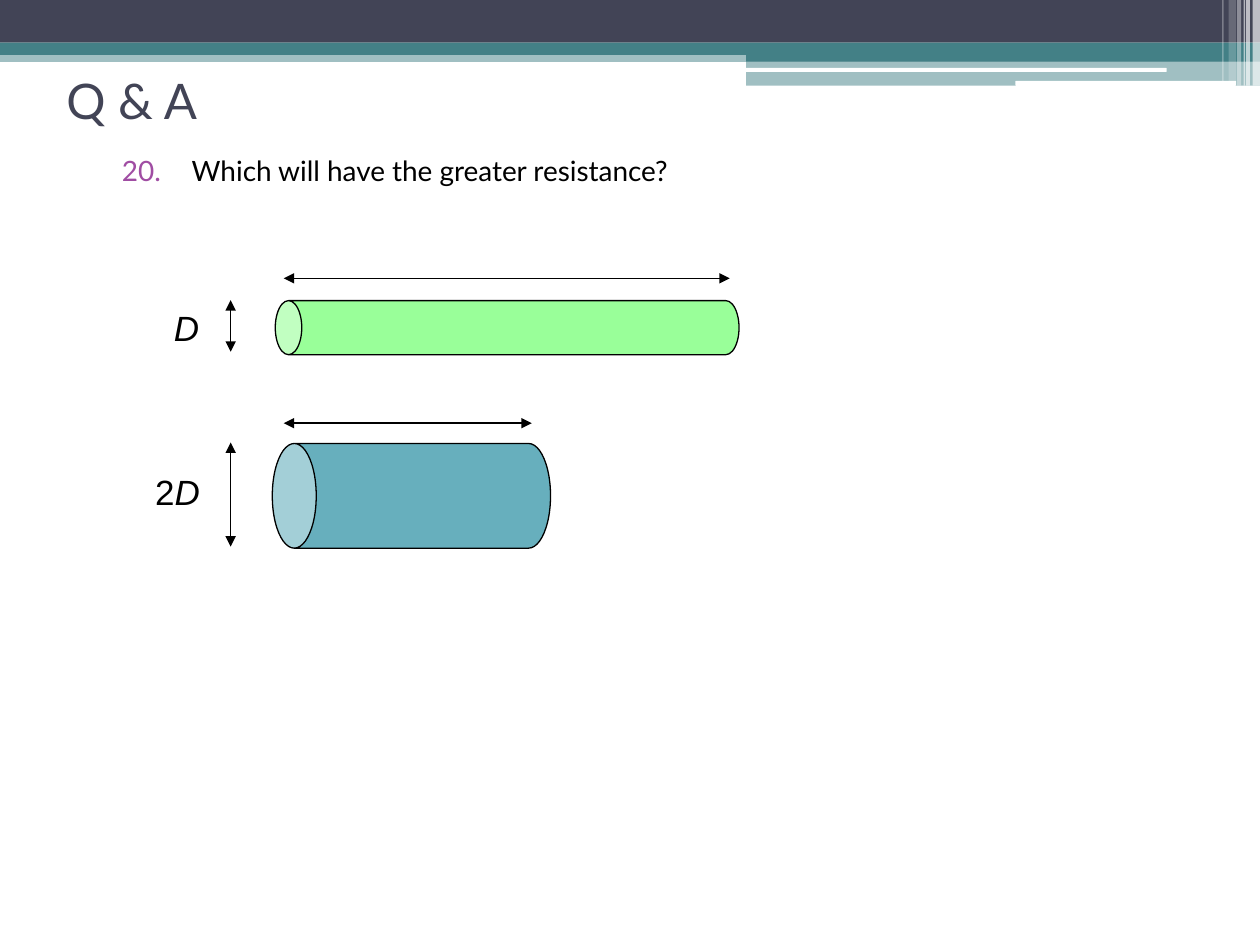
from lxml import etree
from pptx import Presentation
from pptx.dml.color import RGBColor
from pptx.enum.shapes import MSO_CONNECTOR, MSO_SHAPE
from pptx.enum.text import MSO_ANCHOR, MSO_AUTO_SIZE, PP_ALIGN
from pptx.oxml.ns import qn
from pptx.util import Cm, Pt

RECT = MSO_SHAPE.RECTANGLE
ROUND = MSO_SHAPE.ROUNDED_RECTANGLE
CAN = MSO_SHAPE.CAN
LINE = MSO_CONNECTOR.STRAIGHT
MID = MSO_ANCHOR.MIDDLE
GROW = MSO_AUTO_SIZE.SHAPE_TO_FIT_TEXT
MITTE = PP_ALIGN.CENTER

HUES = {
    "slate": "424456",
    "teal": "438086",
    "white": "FFFFFF",
    "black": "000000",
    "plum": "A04DA3",
    "green": "99FF99",
    "blue": "67AFBD",
}


def hue(name):
    return RGBColor.from_string(HUES[name])


def add_sub(node, tag, **attrs):
    return etree.SubElement(node, qn(tag), attrs)


def add_form(slide, kind, box, color):
    form = slide.shapes.add_shape(kind, *map(Cm, box))
    form.shadow.inherit = False
    form.fill.solid()
    form.fill.fore_color.rgb = hue(color)
    form.line.fill.background()
    return form


def add_bar(slide, box, color, alpha=100, kind=RECT):
    bar = add_form(slide, kind, box, color)
    if alpha < 100:
        tone = bar.fill._xPr.find(".//" + qn("a:srgbClr"))
        add_sub(tone, "a:alpha", val=str(alpha * 1000))


def add_can(slide, box, color, depth):
    can = add_form(slide, CAN, box, color)
    can.adjustments[0] = depth
    can.rotation = 270
    can.line.color.rgb = hue("black")
    can.line.width = Pt(0.75)


def add_span(slide, x1, y1, x2, y2):
    span = slide.shapes.add_connector(LINE, *map(Cm, (x1, y1, x2, y2)))
    span.line.color.rgb = hue("black")
    span.line.width = Pt(0.75)
    edge = span.line._get_or_add_ln()
    add_sub(edge, "a:headEnd", type="triangle")
    add_sub(edge, "a:tailEnd", type="triangle")
    add_sub(span._element.spPr, "a:effectLst")


def add_text(slide, box, runs, size, font="Lato", color="black", wrap=True):
    frame = slide.shapes.add_textbox(*map(Cm, box)).text_frame
    frame.word_wrap = wrap
    para = frame.paragraphs[0]
    for text, slant in runs:
        run = para.add_run()
        run.text = text
        run.font.size = Pt(size)
        run.font.name = font
        run.font.italic = slant
        run.font.color.rgb = hue(color)
    return frame


def add_label(slide, box, runs):
    frame = add_text(slide, box, runs, 20, "Arial", wrap=False)
    frame.auto_size = GROW
    frame.paragraphs[0].alignment = MITTE


def add_count(para, start):
    para.space_before = Pt(3)
    props = para._p.get_or_add_pPr()
    props.set("marL", str(Cm(1.57)))
    props.set("indent", str(Cm(-1.27)))
    tone = add_sub(props, "a:buClr")
    add_sub(tone, "a:srgbClr", val=HUES["plum"])
    add_sub(props, "a:buAutoNum", type="arabicPeriod", startAt=str(start))


def add_band(slide):
    add_bar(slide, (0, 1.02, 25.4, 0.23), "teal", 50)
    add_bar(slide, (0, 0, 25.4, 0.86), "slate")
    add_bar(slide, (0, 0.86, 25.4, 0.25), "teal")
    add_bar(slide, (15.04, 0.99, 10.36, 0.25), "teal")
    add_bar(slide, (15.04, 1.22, 10.36, 0.51), "teal", 50)
    add_bar(slide, (15.01, 1.37, 8.51, 0.08), "white", kind=ROUND)
    add_bar(slide, (20.47, 1.63, 4.45, 0.1), "white", kind=ROUND)
    for x, wide, high, alpha in (
        (25.25, 0.15, 1.73, 65),
        (25.12, 0.08, 1.73, 65),
        (25.07, 0.03, 1.73, 60),
        (24.94, 0.08, 1.73, 40),
        (24.77, 0.15, 1.63, 20),
        (24.64, 0.03, 1.63, 30),
    ):
        add_bar(slide, (x, 0, wide, high), "white", alpha)


def main():
    deck = Presentation()
    deck.slide_width, deck.slide_height = Cm(25.4), Cm(19.05)
    slide = deck.slides.add_slide(deck.slide_layouts[6])
    add_band(slide)

    title = add_text(slide, (1.09, 1.32, 22.86, 1.4), [("Q & A", False)], 28, color="slate")
    title.vertical_anchor = MID
    ask = [(" Which will have the greater resistance?", False)]
    body = add_text(slide, (1.91, 2.97, 23.49, 14.17), ask, 16)
    add_count(body.paragraphs[0], 20)

    add_span(slide, 4.65, 6.05, 4.65, 7.09)
    add_span(slide, 4.65, 8.92, 4.65, 11.02)
    add_label(slide, (3.25, 6.05, 1.02, 1.09), [("D", True)])
    add_label(slide, (2.87, 9.37, 1.42, 1.09), [("2", False), ("D", True)])
    add_can(slide, (9.68, 1.93, 1.09, 9.35), "green", 0.49)
    add_can(slide, (7.24, 7.19, 2.11, 5.61), "blue", 0.42)
    add_span(slide, 5.72, 5.61, 14.71, 5.61)
    add_span(slide, 5.72, 8.53, 10.72, 8.53)
    deck.save("out.pptx")


if __name__ == "__main__":
    main()
